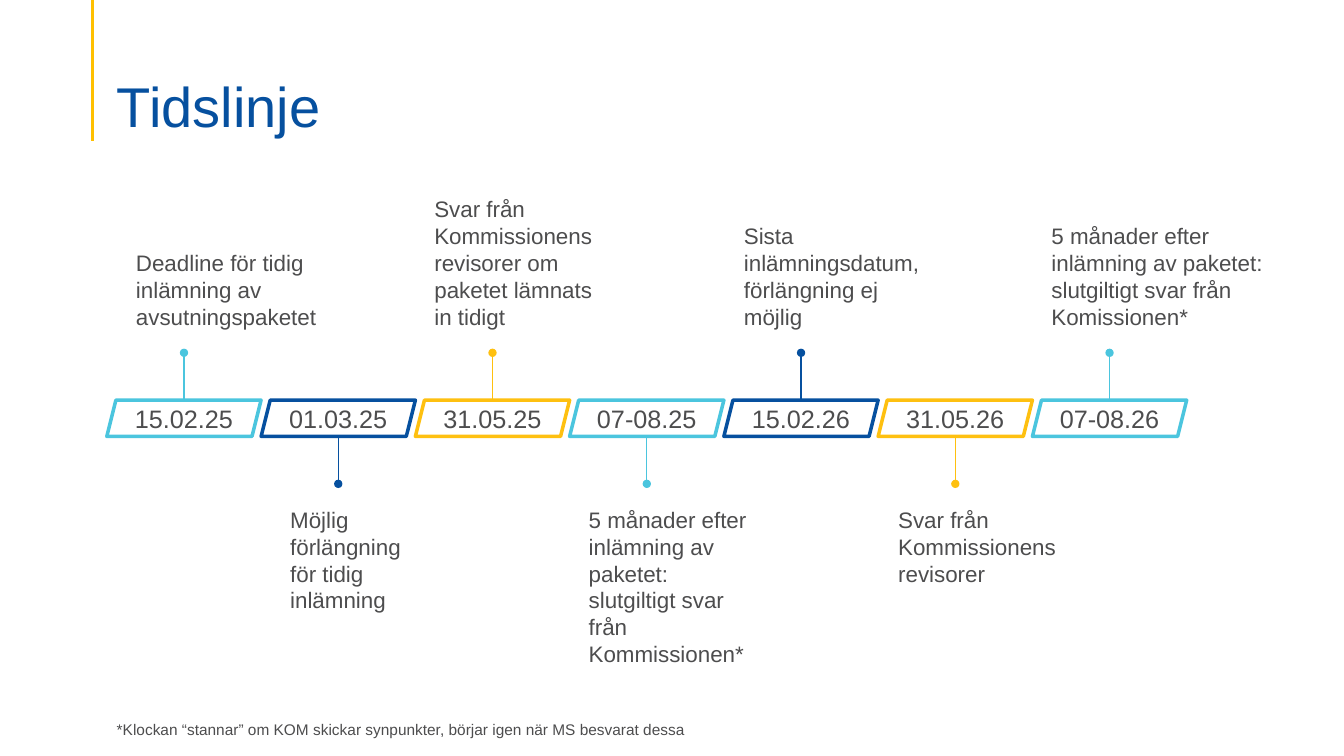
import pptx
import pptx.util
import pptx.dml.color
import pptx.enum.text
import pptx.enum.shapes
import pptx.oxml
import pptx.oxml.ns

Inch = pptx.util.Inches
Text = pptx.enum.text
Form = pptx.enum.shapes

theme = {
    "font": "Arial", "ink": "4D4D4E", "paper": "FFFFFF", "gold": "FFC000",
    "cyan": "4BC5DE", "blue": "06509F", "amber": "FEC010",
    "title": 40, "date": 18, "note": 16, "foot": 11,
}

# Grid: seven equal columns; dates in a middle band, notes above and below
left, step = 1.06, 1.53
top, tall = 3.97, 0.36
stem = 0.47
high, low = 3.32, 4.97  # bottom of upper notes, top of lower notes

# Date, colour, note, note indent in its column, note width, note height
marks = [
    ("15.02.25", "cyan", "Deadline för tidig inlämning av avsutningspaketet",
     0.19, 2.01, 0.91),
    ("01.03.25", "blue", "Möjlig förlängning för tidig inlämning",
     0.19, 1.34, 1.18),
    ("31.05.25", "amber",
     "Svar från Kommissionens revisorer om paketet lämnats in tidigt",
     0.09, 1.84, 1.45),
    ("07-08.25", "cyan",
     "5 månader efter inlämning av paketet: slutgiltigt svar från Kommissionen*",
     0.09, 1.82, 1.72),
    ("15.02.26", "blue", "Sista inlämningsdatum, förlängning ej möjlig",
     0.1, 1.95, 1.18),
    ("31.05.26", "amber", "Svar från Kommissionens revisorer",
     0.1, 1.92, 0.91),
    ("07-08.26", "cyan",
     "5 månader efter inlämning av paketet: slutgiltigt svar från Komissionen*",
     0.09, 2.56, 1.18),
]

deck = pptx.Presentation()
deck.slide_width, deck.slide_height = Inch(13.33), Inch(7.5)
slide = deck.slides.add_slide(deck.slide_layouts[5])
shapes = slide.shapes


def write(shape, words, size, tone="ink", anchor="TOP", align="LEFT"):
    frame = shape.text_frame
    frame.text = words
    frame.word_wrap = True
    frame.auto_size = Text.MSO_AUTO_SIZE.NONE
    frame.vertical_anchor = Text.MSO_ANCHOR[anchor]
    line = frame.paragraphs[0]
    line.alignment = Text.PP_ALIGN[align]
    font = line.runs[0].font
    font.name, font.size = theme["font"], pptx.util.Pt(theme[size])
    font.color.rgb = pptx.dml.color.RGBColor.from_string(theme[tone])


def draw(x, start, end, tone, width):
    line = shapes.add_connector(Form.MSO_CONNECTOR.STRAIGHT,
                                Inch(x), Inch(start), Inch(x), Inch(end))
    line.line.color.rgb = pptx.dml.color.RGBColor.from_string(theme[tone])
    line.line.width = pptx.util.Pt(width)
    props = line._element.spPr
    props.append(pptx.oxml.parse_xml(
        "<a:effectLst %s/>" % pptx.oxml.ns.nsdecls("a")))
    return line


# Title with its gold rule
draw(0.92, 0, 1.4, "gold", 2.25)
title = shapes.title
title.left, title.top = Inch(left), Inch(0.53)
title.width, title.height = Inch(11.5), Inch(0.86)
write(title, "Tidslinje", "title", "blue", "BOTTOM")
title.text_frame.margin_bottom = 0
title.text_frame.paragraphs[0].line_spacing = 0.9

# Timeline: odd marks point up, even marks point down
for col, (date, tone, words, dent, width, height) in enumerate(marks):
    x = left + col * step
    above = col % 2 == 0

    # Date tile
    tile = shapes.add_shape(Form.MSO_SHAPE.PARALLELOGRAM,
                            Inch(x), Inch(top), Inch(step), Inch(tall))
    tile.shadow.inherit = False
    tile.fill.solid()
    tile.fill.fore_color.rgb = pptx.dml.color.RGBColor.from_string(theme["paper"])
    tile.line.color.rgb = pptx.dml.color.RGBColor.from_string(theme[tone])
    tile.line.width = pptx.util.Pt(2.5)
    write(tile, date, "date", anchor="MIDDLE", align="CENTER")
    tile.text_frame.word_wrap = False

    # Stem with a round end
    start = top if above else top + tall
    end = start - stem if above else start + stem
    pin = draw(x + step / 2, start, end, tone, 1)
    pin.line._get_or_add_ln().append(pptx.oxml.parse_xml(
        '<a:tailEnd %s type="oval"/>' % pptx.oxml.ns.nsdecls("a")))

    # Note
    note = shapes.add_textbox(Inch(x + dent), Inch(high - height if above else low),
                              Inch(width), Inch(height))
    write(note, words, "note", anchor="BOTTOM" if above else "TOP")

# Footnote
foot = shapes.add_textbox(Inch(left), Inch(7.09), Inch(9.27), Inch(0.29))
write(foot, "*Klockan “stannar” om KOM skickar synpunkter, börjar igen när MS besvarat dessa",
      "foot", anchor="BOTTOM")

deck.save("out.pptx")
